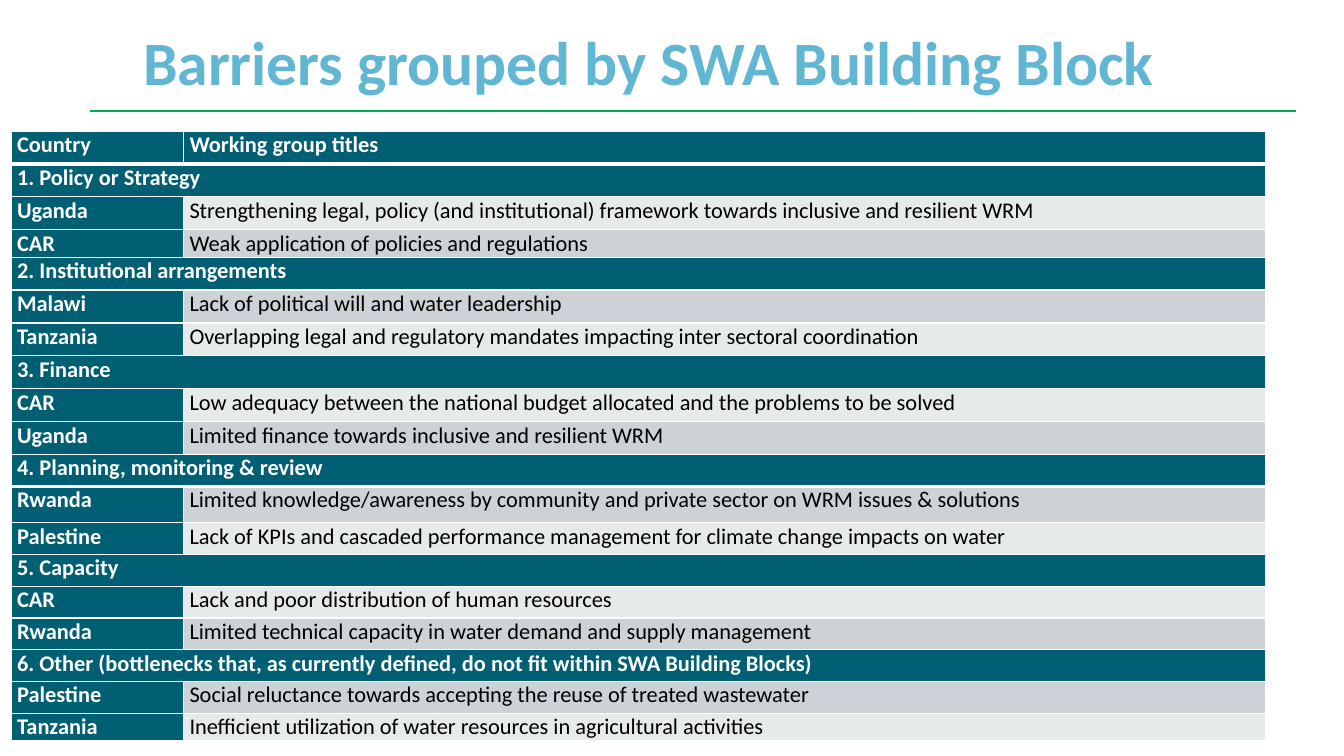
from lxml import etree
from pptx import Presentation
from pptx.dml.color import RGBColor
from pptx.enum import shapes, text
from pptx.oxml import ns
from pptx.util import Inches, Pt

FONT = "Calibri"
TEAL, WHITE, BLACK = "005F73", "FFFFFF", "000000"
LIGHT, DARK = "E7EAEB", "CCD2D5"
LEFT, COLUMNS = 0.11, (1.71, 10.73)

# One-item rows are building block headings across both columns
FIRST_BLOCKS = [
    ("Country", "Working group titles"),
    ("1. Policy or Strategy",),
    ("Uganda", "Strengthening legal, policy (and institutional) framework towards inclusive and resilient WRM"),
    ("CAR", "Weak application of policies and regulations"),
    ("2. Institutional arrangements",),
    ("Malawi", "Lack of political will and water leadership"),
    ("Tanzania", "Overlapping legal and regulatory mandates impacting inter sectoral coordination"),
    ("3. Finance",),
    ("CAR", "Low adequacy between the national budget allocated and the problems to be solved"),
    ("Uganda", "Limited finance towards inclusive and resilient WRM"),
]
LAST_BLOCKS = [
    ("4. Planning, monitoring & review",),
    ("Rwanda", "Limited knowledge/awareness by community and private sector on WRM issues & solutions"),
    ("Palestine", "Lack of KPIs and cascaded performance management for climate change impacts on water"),
    ("5. Capacity",),
    ("CAR", "Lack and poor distribution of human resources"),
    ("Rwanda", "Limited technical capacity in water demand and supply management"),
    ("6. Other (bottlenecks that, as currently defined, do not fit within SWA Building Blocks)",),
    ("Palestine", "Social reluctance towards accepting the reuse of treated wastewater"),
    ("Tanzania", "Inefficient utilization of water resources in agricultural activities"),
]


def rgb(color):
    return RGBColor.from_string(color)


def write(tf, content, size=16, color=WHITE, bold=True, align=text.PP_ALIGN.LEFT, spacing=1.0):
    p = tf.paragraphs[0]
    p.alignment, p.line_spacing = align, spacing
    r = p.add_run()
    r.text = content
    r.font.name, r.font.size, r.font.bold = FONT, Pt(size), bold
    r.font.color.rgb = rgb(color)


def set_borders(cell, top, bottom):
    """White borders on all sides, widths in points."""
    tc_pr = cell._tc.get_or_add_tcPr()
    sides = {"lnL": 1, "lnR": 1, "lnT": top, "lnB": bottom}
    for i, (side, width) in enumerate(sides.items()):
        ln = etree.Element(ns.qn(f"a:{side}"), w=str(Pt(width)))
        fill = etree.SubElement(ln, ns.qn("a:solidFill"))
        etree.SubElement(fill, ns.qn("a:srgbClr"), val=WHITE)
        tc_pr.insert(i, ln)


def format_cell(cell, fill, row):
    cell.margin_left = cell.margin_right = Inches(0.06)
    cell.margin_top = cell.margin_bottom = 0
    cell.vertical_anchor = text.MSO_ANCHOR.TOP
    cell.fill.solid()
    cell.fill.fore_color.rgb = rgb(fill)
    # The first row is set off by a thick line
    set_borders(cell, top=3 if row == 1 else 1, bottom=3 if row == 0 else 1)


def add_barrier_table(slide, top, height, rows, fixed_heights):
    table = slide.shapes.add_table(len(rows), 2, Inches(LEFT), Inches(top),
                                   Inches(sum(COLUMNS)), Inches(height)).table
    for column, width in zip(table.columns, COLUMNS):
        column.width = Inches(width)
    # Rows without a fixed height share what is left
    shared = (height - sum(fixed_heights.values())) / (len(rows) - len(fixed_heights))
    for i, entries in enumerate(rows):
        table.rows[i].height = Inches(fixed_heights.get(i, shared))
        is_heading = i == 0 or len(entries) == 1
        band = TEAL if is_heading else (DARK if i % 2 else LIGHT)
        format_cell(table.cell(i, 0), TEAL, i)
        format_cell(table.cell(i, 1), band, i)
        if len(entries) == 1:
            table.cell(i, 0).merge(table.cell(i, 1))
        for j, entry in enumerate(entries):
            label = is_heading or j == 0
            write(table.cell(i, j).text_frame, entry,
                  color=WHITE if label else BLACK, bold=label)


def add_title(slide, content):
    sp = slide.shapes.title
    sp.left, sp.top, sp.width, sp.height = map(Inches, (LEFT, 0.14, 12.66, 1.02))
    tf = sp.text_frame
    tf.word_wrap = True
    tf.vertical_anchor = text.MSO_ANCHOR.MIDDLE
    write(tf, content, size=44, color="60B6D3", align=text.PP_ALIGN.CENTER, spacing=0.9)


def add_rule(slide, left, right, y, color):
    line = slide.shapes.add_connector(shapes.MSO_CONNECTOR.STRAIGHT,
                                      Inches(left), Inches(y), Inches(right), Inches(y))
    line.line.color.rgb = rgb(color)
    line.line.width = Pt(1.5)
    etree.SubElement(line._element.spPr, ns.qn("a:effectLst"))


def main():
    prs = Presentation()
    prs.slide_width, prs.slide_height = Inches(13.33), Inches(7.5)
    slide = prs.slides.add_slide(prs.slide_layouts[5])

    # Title and the line under it
    add_title(slide, "Barriers grouped by SWA Building Block")
    add_rule(slide, 0.89, 12.85, 1.1, "00B050")

    # Building blocks 1 to 3, then 4 to 6
    add_barrier_table(slide, 1.3, 3.21, FIRST_BLOCKS, {3: 0.27})
    add_barrier_table(slide, 4.51, 2.84, LAST_BLOCKS, {1: 0.36, 8: 0.27})

    prs.save("out.pptx")


if __name__ == "__main__":
    main()
